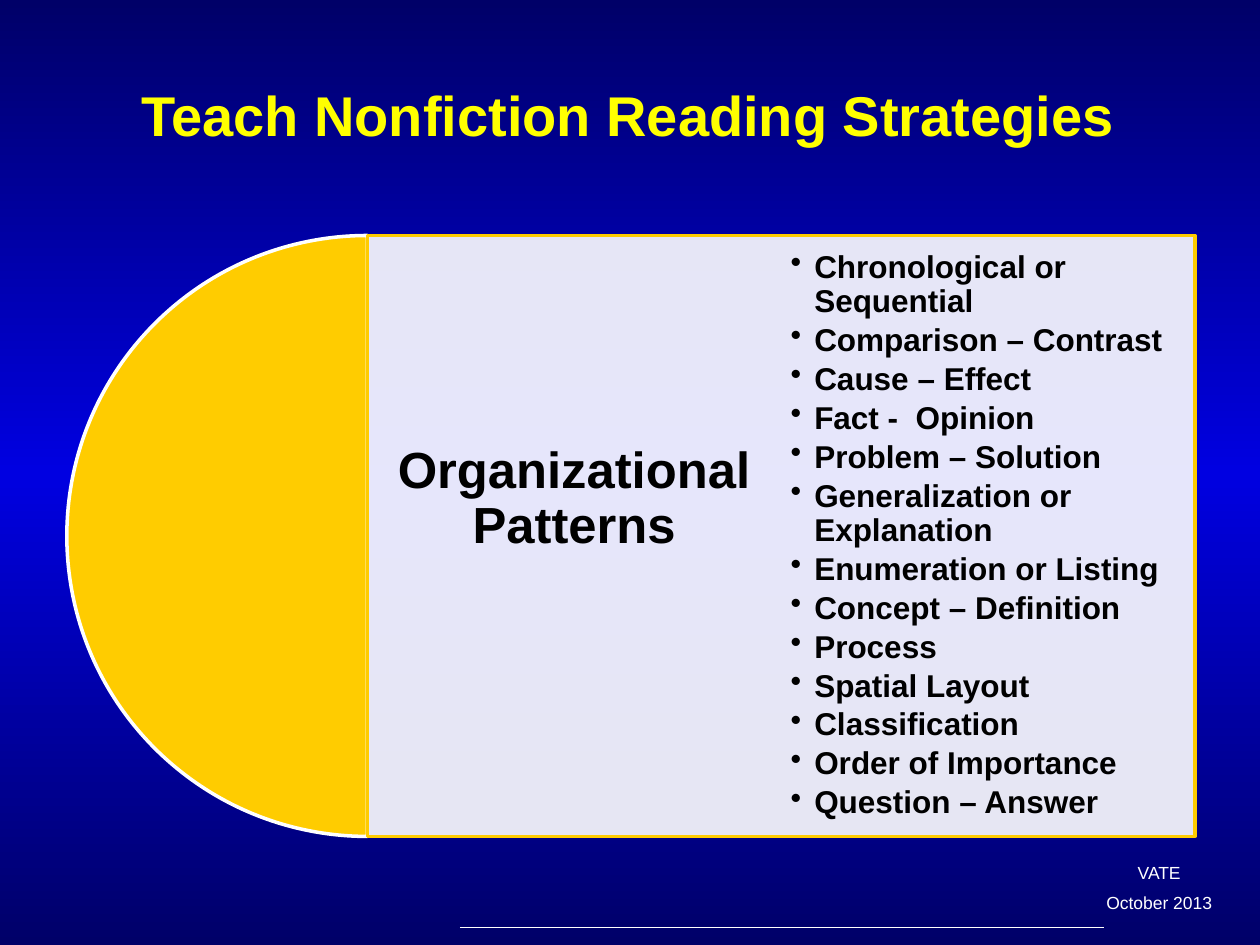
from copy import deepcopy
from dataclasses import dataclass

from lxml.etree import SubElement
from pptx import Presentation
from pptx.dml.color import RGBColor
from pptx.enum.shapes import MSO_CONNECTOR, MSO_SHAPE
from pptx.enum.text import MSO_ANCHOR, PP_ALIGN
from pptx.oxml.ns import qn
from pptx.util import Pt

TITLE = "Teach Nonfiction Reading Strategies"
TOPIC = "Organizational Patterns"
PATTERNS = [
    "Chronological or Sequential",
    "Comparison – Contrast",
    "Cause – Effect",
    "Fact -  Opinion",
    "Problem – Solution",
    "Generalization or Explanation",
    "Enumeration or Listing",
    "Concept – Definition",
    "Process",
    "Spatial Layout",
    "Classification",
    "Order of Importance",
    "Question – Answer",
]
FOOTER = ["VATE", "October 2013"]


@dataclass(frozen=True)
class Theme:
    font: str = "Arial"
    night: str = "000068"
    blue: str = "0000E1"
    white: str = "FFFFFF"
    yellow: str = "FFFF00"
    gold: str = "FFCC00"
    black: str = "000000"
    title_size: float = 32
    topic_size: float = 29
    pattern_size: float = 18
    footer_size: float = 10


THEME = Theme()

# Diagram geometry, in points
DIAGRAM_TOP, DIAMETER = 134.6, 343.4
CIRCLE_LEFT = 38.2
PANEL_LEFT = CIRCLE_LEFT + DIAMETER / 2
PANEL_WIDTH = 473
COLUMN_WIDTH = PANEL_WIDTH / 2
TOPIC_LIFT = 42  # extra bottom inset that raises the topic above the middle


def rgb(code):
    return RGBColor.from_string(code)


def add_text(slide, box, lines, *, size, color, bold=False, align=PP_ALIGN.CENTER,
             anchor=MSO_ANCHOR.MIDDLE, insets=(7.2, 3.6, 7.2, 3.6),
             spacing=1.0, before=0, after=0, bullet_indent=0):
    """Add one text box; box is left, top, width, height and insets run from the left clockwise."""
    frame = slide.shapes.add_textbox(*map(Pt, box)).text_frame
    frame.word_wrap = True
    frame.vertical_anchor = anchor
    (frame.margin_left, frame.margin_top,
     frame.margin_right, frame.margin_bottom) = map(Pt, insets)
    for index, line in enumerate(lines):
        paragraph = frame.add_paragraph() if index else frame.paragraphs[0]
        paragraph.text = line
        paragraph.alignment = align
        paragraph.line_spacing = spacing
        paragraph.space_before = Pt(before if index else 0)
        paragraph.space_after = Pt(after)
        if bullet_indent:
            properties = paragraph._p.get_or_add_pPr()
            properties.set("marL", str(Pt(bullet_indent)))
            properties.set("indent", str(-Pt(bullet_indent)))
            SubElement(properties, qn("a:buChar"), char="•")
        font = paragraph.runs[0].font
        font.name, font.size, font.bold = THEME.font, Pt(size), bold
        font.color.rgb = rgb(color)


def add_shape(slide, preset, box, fill, line):
    shape = slide.shapes.add_shape(preset, *map(Pt, box))
    shape.shadow.inherit = False
    shape.fill.solid()
    shape.fill.fore_color.rgb = rgb(fill)
    shape.line.color.rgb = rgb(line)
    shape.line.width = Pt(2)
    return shape


def paint_background(slide):
    fill = slide.background.fill
    fill.gradient()
    fill.gradient_angle = 90
    stop_list = slide._element.find(".//" + qn("a:gsLst"))
    stop_list.append(deepcopy(stop_list[0]))
    colors = (THEME.night, THEME.blue, THEME.night)
    for stop, position, color in zip(fill.gradient_stops, (0, 0.5, 1), colors):
        stop.position = position
        stop.color.rgb = rgb(color)


def add_footer(slide):
    rule = slide.shapes.add_connector(
        MSO_CONNECTOR.STRAIGHT, Pt(262.8), Pt(530), Pt(630.8), Pt(530))
    rule.line.color.rgb = rgb(THEME.white)
    rule.line.width = Pt(0.75)
    SubElement(rule._element.spPr, qn("a:effectLst"))
    add_text(slide, (604.8, 488.9, 115.2, 37.4), FOOTER, size=THEME.footer_size,
             color=THEME.white, anchor=MSO_ANCHOR.TOP, before=5.5)


def add_diagram(slide):
    half_circle = add_shape(slide, MSO_SHAPE.PIE,
                            (CIRCLE_LEFT, DIAGRAM_TOP, DIAMETER, DIAMETER),
                            THEME.gold, THEME.white)
    half_circle.adjustments[0] = 54   # 90 degrees
    half_circle.adjustments[1] = 162  # 270 degrees

    panel = add_shape(slide, MSO_SHAPE.RECTANGLE,
                      (PANEL_LEFT, DIAGRAM_TOP, PANEL_WIDTH, DIAMETER),
                      THEME.white, THEME.gold)
    panel_color = panel._element.spPr.find(qn("a:solidFill"))[0]
    SubElement(panel_color, qn("a:alpha"), val="90000")

    add_text(slide, (PANEL_LEFT, DIAGRAM_TOP, COLUMN_WIDTH, DIAMETER), [TOPIC],
             size=THEME.topic_size, color=THEME.black, bold=True, spacing=0.9,
             insets=(8.7, 8.7, 8.7, 8.7 + TOPIC_LIFT))
    add_text(slide, (PANEL_LEFT + COLUMN_WIDTH, DIAGRAM_TOP, COLUMN_WIDTH, DIAMETER),
             PATTERNS, size=THEME.pattern_size, color=THEME.black, bold=True,
             align=PP_ALIGN.LEFT, spacing=0.9, after=2.8, bullet_indent=13.5,
             insets=(5.4, 5.4, 5.4, 5.4))


def main():
    presentation = Presentation()
    presentation.slide_width, presentation.slide_height = Pt(720), Pt(540)
    slide = presentation.slides.add_slide(presentation.slide_layouts[6])
    paint_background(slide)
    add_footer(slide)
    add_text(slide, (34.6, 23.8, 648.7, 90), [TITLE], size=THEME.title_size,
             color=THEME.yellow, bold=True, spacing=0.8)
    add_diagram(slide)
    presentation.save("out.pptx")


if __name__ == "__main__":
    main()
